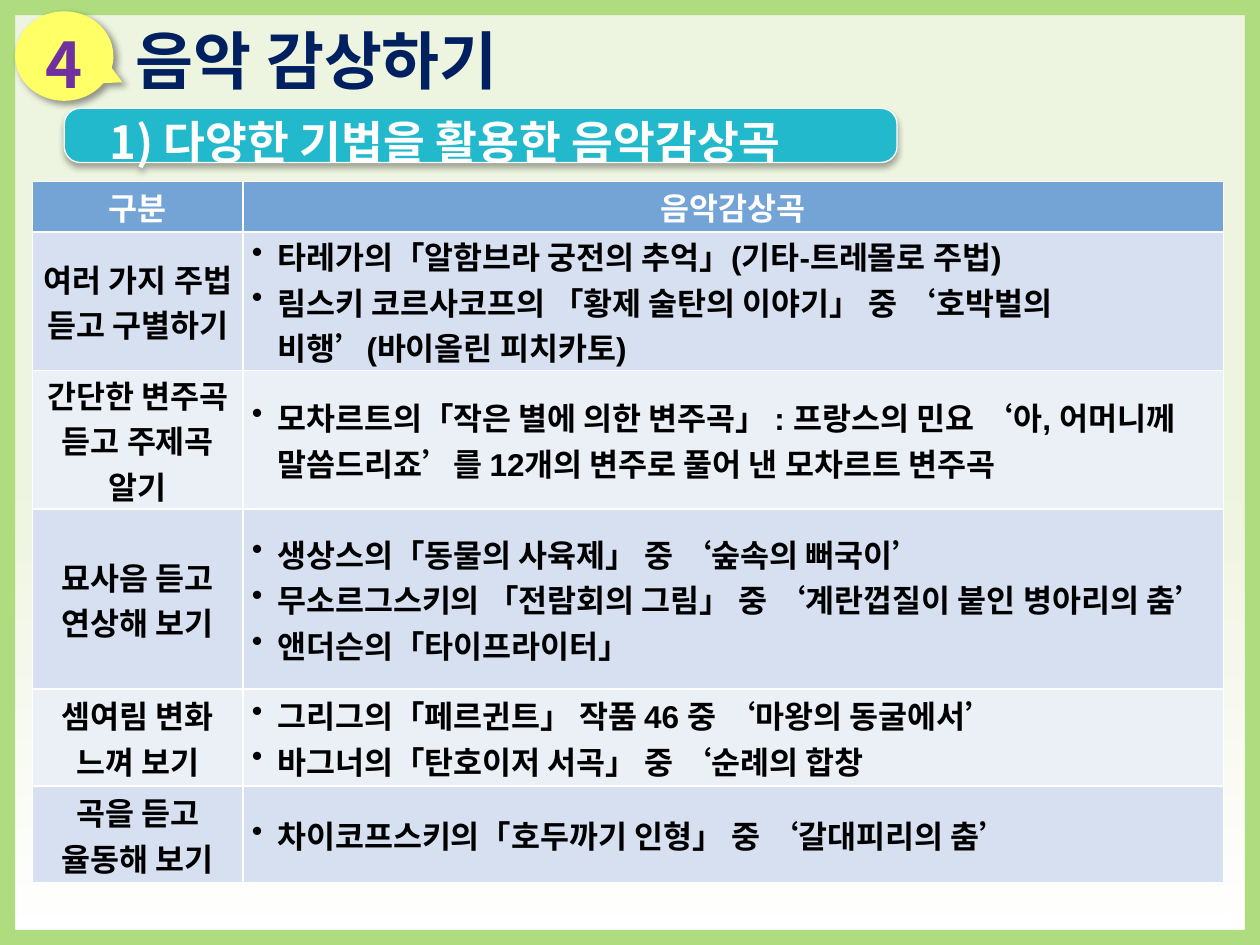
from dataclasses import dataclass
from lxml.etree import SubElement
from pptx import Presentation
from pptx.dml.color import RGBColor
from pptx.enum.shapes import MSO_SHAPE
from pptx.enum.text import MSO_ANCHOR, PP_ALIGN
from pptx.oxml.ns import qn
from pptx.util import Inches, Pt


@dataclass(frozen=True)
class Theme:
    korean: str = "Noto Sans CJK KR"
    latin: str = "Arial"
    title: int = 36
    head: int = 26
    body: int = 18
    white: str = "FFFFFF"
    black: str = "000000"
    navy: str = "002060"
    purple: str = "7030A0"
    yellow: str = "FFFF66"
    teal: str = "23B9CD"
    frame: str = "AFDC7E"
    mist: str = "EDF4DF"
    blue: str = "74A3D6"
    bands: tuple = ("D6E0F0", "EBF0F7")


THEME = Theme()
WIDE, HIGH = 10, 7.5
COLS = (1.67, 7.78)
ROWS = (0.4, 1.1, 1.1, 1.43, 0.77, 0.77)
HEADS = ("구분", "음악감상곡")
MUSIC = (
    ("여러 가지 주법 듣고 구별하기", (
        "타레가의「알함브라 궁전의 추억」(기타-트레몰로 주법)",
        "림스키 코르사코프의 「황제 술탄의 이야기」 중 ‘호박벌의 비행’(바이올린 피치카토)")),
    ("간단한 변주곡 듣고 주제곡 알기", (
        "모차르트의「작은 별에 의한 변주곡」 : 프랑스의 민요 ‘아, 어머니께 말씀드리죠’를 "
        "12개의 변주로 풀어 낸 모차르트 변주곡",)),
    ("묘사음 듣고 연상해 보기", (
        "생상스의「동물의 사육제」 중 ‘숲속의 뻐국이’",
        "무소르그스키의 「전람회의 그림」 중 ‘계란껍질이 붙인 병아리의 춤’",
        "앤더슨의「타이프라이터」")),
    ("셈여림 변화 느껴 보기", (
        "그리그의「페르귄트」 작품 46 중 ‘마왕의 동굴에서’",
        "바그너의「탄호이저 서곡」 중 ‘순례의 합창")),
    ("곡을 듣고 율동해 보기", (
        "차이코프스키의「호두까기 인형」 중 ‘갈대피리의 춤’",)),
)


def paint(fill, color):
    fill.solid()
    fill.fore_color.rgb = RGBColor.from_string(color)


def style(para, size, color, face=THEME.korean):
    font = para.font
    font.size, font.bold, font.name = Pt(size), True, face
    font.color.rgb = RGBColor.from_string(color)
    rules = para._p.pPr.find(qn("a:defRPr"))
    SubElement(rules, qn("a:ea"), typeface=THEME.korean)


def indent(para, left, first):
    rules = para._p.get_or_add_pPr()
    rules.set("marL", str(Inches(left)))
    rules.set("indent", str(Inches(first)))
    return rules


def shade(shape, alpha, blur, dist, angle):
    shape.shadow.inherit = False
    effects = shape._element.spPr.find(qn("a:effectLst"))
    outer = SubElement(effects, qn("a:outerShdw"), blurRad=str(Pt(blur)),
                       dist=str(Pt(dist)), dir=str(angle * 60000),
                       algn="ctr", rotWithShape="0")
    tint = SubElement(outer, qn("a:srgbClr"), val=THEME.black)
    SubElement(tint, qn("a:alpha"), val=str(alpha * 1000))


def draw(slide, kind, box, color, adjust=()):
    shape = slide.shapes.add_shape(kind, *map(Inches, box))
    shape.shadow.inherit = False
    shape.line.fill.background()
    paint(shape.fill, color)
    for index, value in enumerate(adjust):
        shape.adjustments[index] = value
    return shape


def write(shape, text, size, color, align, inset, wrap=True):
    frame = shape.text_frame
    frame.word_wrap = wrap
    frame.vertical_anchor = MSO_ANCHOR.MIDDLE
    frame.margin_left = frame.margin_right = Inches(inset[0])
    frame.margin_top = frame.margin_bottom = Inches(inset[1])
    para = frame.paragraphs[0]
    para.text, para.alignment = text, align
    style(para, size, color)
    return para


def back(slide):
    full = (0, 0, WIDE, HIGH)
    fill = draw(slide, MSO_SHAPE.RECTANGLE, full, THEME.white).fill
    fill.gradient()
    fill.gradient_angle = 90
    for stop, spot, color in zip(fill.gradient_stops, (0, 0.5),
                                 (THEME.white, THEME.mist)):
        stop.position = spot
        stop.color.rgb = RGBColor.from_string(color)
    draw(slide, MSO_SHAPE.FRAME, full, THEME.frame, (0.016,))


def heading(slide):
    title = slide.shapes.add_textbox(*map(Inches, (0.98, 0.09, 8.9, 0.76)))
    write(title, "음악 감상하기", THEME.title, THEME.navy,
          PP_ALIGN.LEFT, (0.1, 0.05), False)
    badge = draw(slide, MSO_SHAPE.OVAL_CALLOUT, (0.12, 0.09, 0.78, 0.71),
                 THEME.yellow, (0.592, 0.293))
    shade(badge, 40, 4, 3, 45)
    para = write(badge, "4", THEME.title, THEME.purple,
                 PP_ALIGN.CENTER, (0.04, 0.04))
    para.line_spacing = 1.2


def banner(slide):
    shape = draw(slide, MSO_SHAPE.ROUNDED_RECTANGLE, (0.51, 0.86, 6.61, 0.43),
                 THEME.teal, (0.294,))
    paint(shape.line.fill, THEME.white)
    shape.line.width = Pt(0.75)
    shade(shape, 32, 3.5, 2.2, 90)
    para = write(shape, "1) 다양한 기법을 활용한 음악감상곡", THEME.head,
                 THEME.white, PP_ALIGN.LEFT, (0.24, 0.05))
    para.line_spacing, para.space_after = 1.2, Pt(12)
    indent(para, 0.28, -0.2)


def enter(cell, lines, fill, color, bullet=False):
    paint(cell.fill, fill)
    cell.vertical_anchor = MSO_ANCHOR.MIDDLE
    cell.margin_left = cell.margin_right = Inches(0.07)
    cell.margin_top = cell.margin_bottom = Inches(0.01)
    cell.text_frame.text = "\n".join(lines)
    for para in cell.text_frame.paragraphs:
        if bullet:
            SubElement(indent(para, 0.2, -0.2), qn("a:buChar"), char="•")
        else:
            para.alignment = PP_ALIGN.CENTER
        style(para, THEME.body, color, THEME.latin)


def chart(slide):
    box = (0.26, 1.44, sum(COLS), sum(ROWS))
    table = slide.shapes.add_table(len(ROWS), len(COLS),
                                   *map(Inches, box)).table
    for col, width in zip(table.columns, COLS):
        col.width = Inches(width)
    for row, height in zip(table.rows, ROWS):
        row.height = Inches(height)
    for col, text in enumerate(HEADS):
        enter(table.cell(0, col), [text], THEME.blue, THEME.white)
    for row, (topic, works) in enumerate(MUSIC, 1):
        band = THEME.bands[(row - 1) % 2]
        enter(table.cell(row, 0), [topic], band, THEME.black)
        enter(table.cell(row, 1), works, band, THEME.black, True)


def main():
    deck = Presentation()
    deck.slide_width, deck.slide_height = Inches(WIDE), Inches(HIGH)
    slide = deck.slides.add_slide(deck.slide_layouts[6])
    for part in (back, heading, banner, chart):
        part(slide)
    deck.save("out.pptx")


if __name__ == "__main__":
    main()
